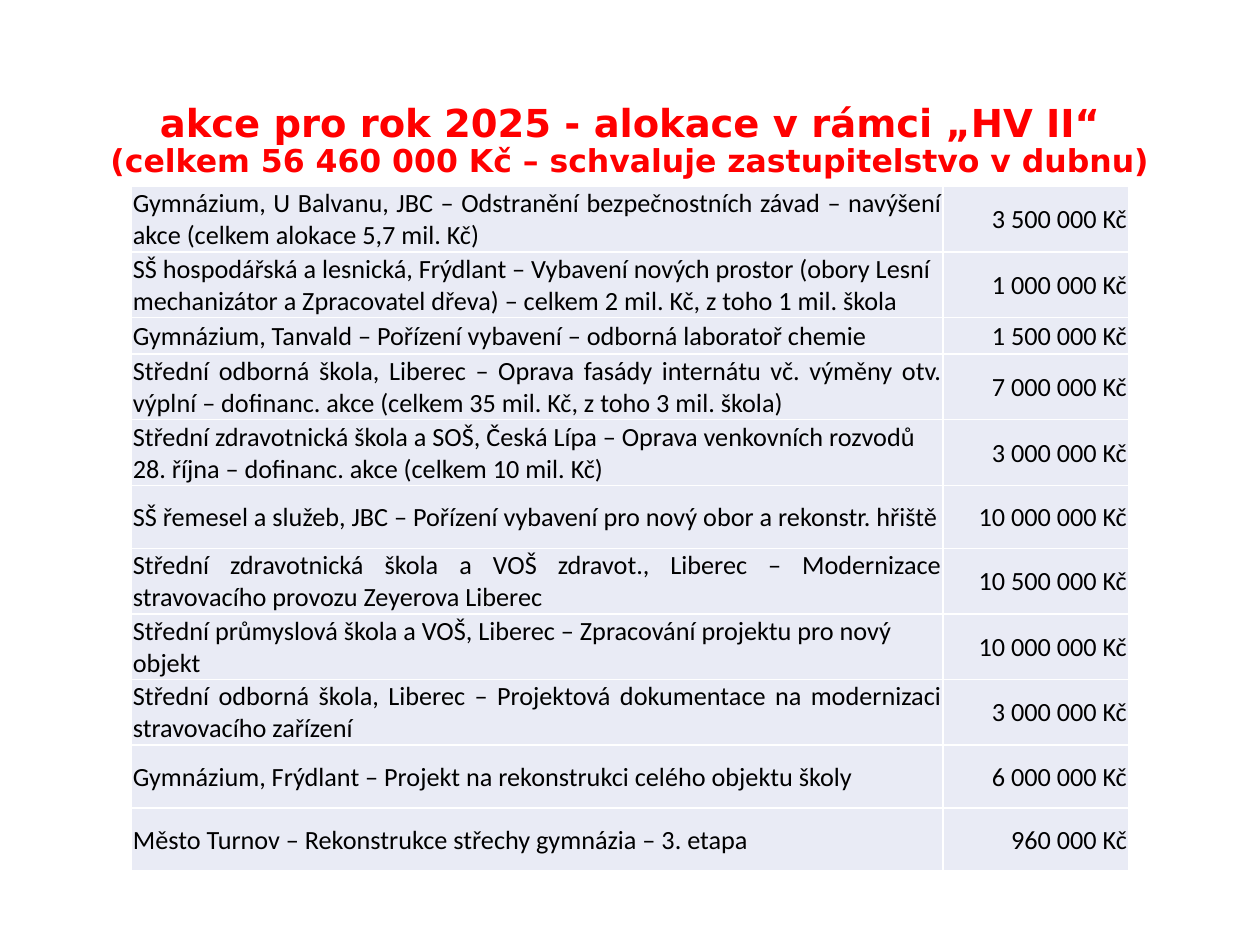
"""Build the slide listing school projects and their 2025 allocations."""
from lxml import etree
from pptx import Presentation
from pptx.dml.color import RGBColor
from pptx.enum.text import MSO_ANCHOR, PP_ALIGN
from pptx.oxml.ns import qn
from pptx.util import Inches, Pt

LEFT, RIGHT, CENTER, JUSTIFY = PP_ALIGN.LEFT, PP_ALIGN.RIGHT, PP_ALIGN.CENTER, PP_ALIGN.JUSTIFY
MIDDLE = MSO_ANCHOR.MIDDLE

THEME = {
    "title_color": RGBColor.from_string("FF0000"),
    "text_color": RGBColor.from_string("000000"),
    "cell_fill": RGBColor.from_string("E9EBF5"),
    "border": "FFFFFF",
    "title_font": "DejaVu Sans",
    "table_font": "Calibri",
    "title_size": Pt(22),
    "subtitle_size": Pt(18),
    "table_size": Pt(15),
}

PROJECTS = [
    (["Gymnázium, U Balvanu, JBC – Odstranění bezpečnostních závad – navýšení akce (celkem alokace 5,7 mil. Kč)"],
     "3 500 000 Kč", JUSTIFY),
    (["SŠ hospodářská a lesnická, Frýdlant – Vybavení nových prostor (obory Lesní mechanizátor a Zpracovatel dřeva) – celkem 2 mil. Kč, z toho 1 mil. škola"],
     "1 000 000 Kč", LEFT),
    (["Gymnázium, Tanvald – Pořízení vybavení – odborná laboratoř chemie"],
     "1 500 000 Kč", JUSTIFY),
    (["Střední odborná škola, Liberec – Oprava fasády internátu vč. výměny otv. výplní – dofinanc. akce (celkem 35 mil. Kč, z toho 3 mil. škola)"],
     "7 000 000 Kč", JUSTIFY),
    (["Střední zdravotnická škola a SOŠ, Česká Lípa – Oprava venkovních rozvodů",
      "28. října – dofinanc. akce (celkem 10 mil. Kč)"],
     "3 000 000 Kč", JUSTIFY),
    (["SŠ řemesel a služeb, JBC – Pořízení vybavení pro nový obor a rekonstr. hřiště"],
     "10 000 000 Kč", JUSTIFY),
    (["Střední zdravotnická škola a VOŠ zdravot., Liberec – Modernizace stravovacího provozu Zeyerova Liberec"],
     "10 500 000 Kč", JUSTIFY),
    (["Střední průmyslová škola a VOŠ, Liberec – Zpracování projektu pro nový objekt"],
     "10 000 000 Kč", LEFT),
    (["Střední odborná škola, Liberec – Projektová dokumentace na modernizaci stravovacího zařízení"],
     "3 000 000 Kč", JUSTIFY),
    (["Gymnázium, Frýdlant – Projekt na rekonstrukci celého objektu školy"],
     "6 000 000 Kč", JUSTIFY),
    (["Město Turnov – Rekonstrukce střechy gymnázia – 3. etapa"],
     "960 000 Kč", JUSTIFY),
]
COLUMN_WIDTHS = [Inches(6.44), Inches(1.47)]
ROW_HEIGHT, SHORT_ROW_HEIGHT, SHORT_ROW = Inches(0.5), Inches(0.29), 2


def add_run(paragraph, text, font, size, color, bold=False):
    run = paragraph.add_run()
    run.text = text
    run.font.name, run.font.size, run.font.bold = font, size, bold
    run.font.color.rgb = color


def add_borders(cell):
    properties = cell._tc.get_or_add_tcPr()
    for side in ("a:lnL", "a:lnR", "a:lnT", "a:lnB"):
        line = etree.SubElement(properties, qn(side), w=str(Pt(1)))
        solid = etree.SubElement(line, qn("a:solidFill"))
        etree.SubElement(solid, qn("a:srgbClr"), val=THEME["border"])


deck = Presentation()
deck.slide_width, deck.slide_height = Inches(10), Inches(7.5)
slide = deck.slides.add_slide(deck.slide_layouts[6])

row_heights = [SHORT_ROW_HEIGHT if row == SHORT_ROW else ROW_HEIGHT for row in range(len(PROJECTS))]
table_width = sum(COLUMN_WIDTHS)
allocations = slide.shapes.add_table(
    len(PROJECTS), len(COLUMN_WIDTHS), (deck.slide_width - table_width) // 2, Inches(1.48),
    table_width, sum(row_heights)).table
allocations.first_row = allocations.horz_banding = False
for column, width in zip(allocations.columns, COLUMN_WIDTHS):
    column.width = width

for row, height, (project, amount, project_align) in zip(allocations.rows, row_heights, PROJECTS):
    row.height = height
    for cell, lines, align in zip(row.cells, (project, [amount]), (project_align, RIGHT)):
        add_borders(cell)
        cell.fill.solid()
        cell.fill.fore_color.rgb = THEME["cell_fill"]
        cell.vertical_anchor = MIDDLE
        cell.margin_left = cell.margin_right = cell.margin_top = Inches(0.01)
        cell.margin_bottom = 0
        for index, line in enumerate(lines):
            paragraph = cell.text_frame.add_paragraph() if index else cell.text_frame.paragraphs[0]
            paragraph.alignment = align
            add_run(paragraph, line, THEME["table_font"], THEME["table_size"], THEME["text_color"])

title_width = Inches(8.62)
heading = slide.shapes.add_textbox(
    (deck.slide_width - title_width) // 2, Inches(0.77), title_width, Inches(0.71)).text_frame
heading.word_wrap = True
heading.vertical_anchor = MIDDLE
headline = heading.paragraphs[0]
headline.alignment = CENTER
headline.line_spacing = 0.9
add_run(headline, "akce pro rok 2025 - alokace v rámci „HV II“",
        THEME["title_font"], THEME["title_size"], THEME["title_color"], True)
headline.add_line_break()
add_run(headline, "(celkem 56 460 000 Kč – schvaluje zastupitelstvo v dubnu)",
        THEME["title_font"], THEME["subtitle_size"], THEME["title_color"], True)

deck.save("out.pptx")
